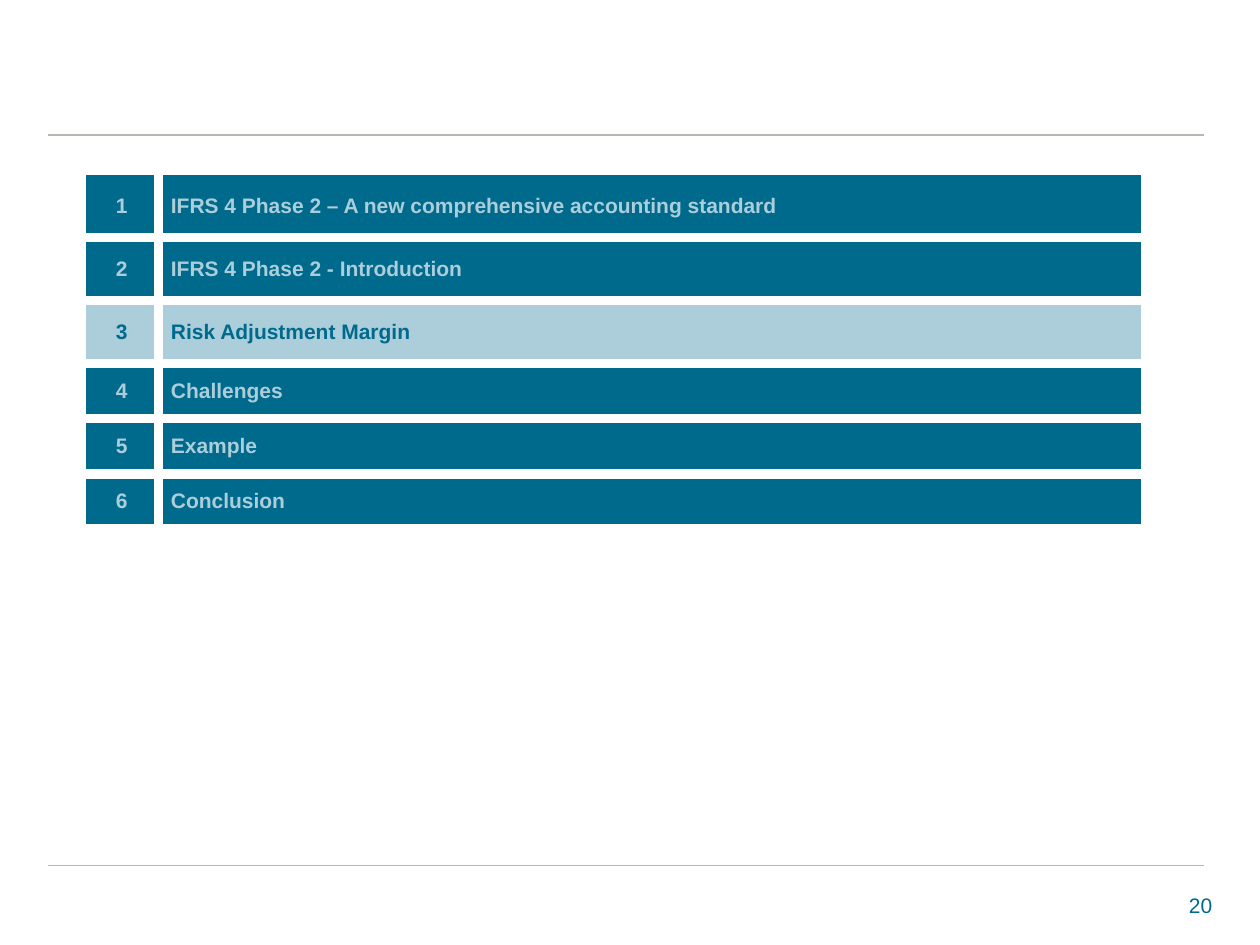
from lxml.etree import SubElement
from pptx import Presentation
from pptx.dml.color import RGBColor
from pptx.enum.shapes import MSO_CONNECTOR
from pptx.enum.text import MSO_ANCHOR, PP_ALIGN
from pptx.oxml import parse_xml
from pptx.oxml.ns import nsdecls, qn
from pptx.util import Pt

COLOURS = {"teal": "006A8D", "pale": "ABCEDA", "rule": "B7B8B1", "white": "FFFFFF"}
AGENDA = [
    ("IFRS 4 Phase 2 – A new comprehensive accounting standard", 36.4),
    ("IFRS 4 Phase 2 - Introduction", 36),
    ("Risk Adjustment Margin", 36),
    ("Challenges", 31.5),
    ("Example", 31.5),
    ("Conclusion", 31.5),
]
CURRENT_TOPIC = 3
HANGING_TOPICS = 4
COLUMN_WIDTHS = (42, 562)


class SlideBuilder:
    """Draw styled elements on the current slide."""

    def __init__(self, slide):
        self.slide = slide
        self.font_format = {"name": "Arial", "size": Pt(12)}

    def colour(self, name):
        return RGBColor.from_string(COLOURS[name])

    def add_text(self, paragraph, text, colour, bold, alignment):
        run = paragraph.add_run()
        run.text = text
        paragraph.alignment = alignment
        for name, value in {**self.font_format, "bold": bold}.items():
            setattr(run.font, name, value)
        run.font.color.rgb = self.colour(colour)

    def rule(self, left, right, top):
        line = self.slide.shapes.add_connector(
            MSO_CONNECTOR.STRAIGHT, Pt(left), Pt(top), Pt(right), Pt(top))
        line.line.width = Pt(0.75)
        line.line.color.rgb = self.colour("rule")
        SubElement(line._element.spPr, qn("a:effectLst"))

    def page_number(self, text, left, top, width, height):
        box = self.slide.shapes.add_textbox(Pt(left), Pt(top), Pt(width), Pt(height))
        frame = box.text_frame
        for name, value in {"word_wrap": True, "margin_right": 0}.items():
            setattr(frame, name, value)
        self.add_text(frame.paragraphs[0], text, "teal", False, PP_ALIGN.RIGHT)

    def borders(self, cell, widths):
        properties = cell._tc.get_or_add_tcPr()
        for position, (side, width) in enumerate(widths.items()):
            properties.insert(position, parse_xml(
                f'<a:ln{side} {nsdecls("a")} w="{Pt(width)}"><a:solidFill>'
                f'<a:srgbClr val="{COLOURS["white"]}"/></a:solidFill></a:ln{side}>'))

    def cell(self, cell, text, fill, colour, alignment, hanging, widths):
        cell.vertical_anchor = MSO_ANCHOR.MIDDLE
        cell.fill.solid()
        cell.fill.fore_color.rgb = self.colour(fill)
        self.borders(cell, widths)
        paragraph = cell.text_frame.paragraphs[0]
        if hanging:
            properties = paragraph._p.get_or_add_pPr()
            properties.set("marL", str(Pt(27)))
            properties.set("indent", str(-Pt(27)))
        self.add_text(paragraph, text, colour, True, alignment)

    def agenda(self, topics, current, left, top):
        height = sum(row_height for _, row_height in topics)
        table = self.slide.shapes.add_table(
            len(topics), len(COLUMN_WIDTHS), Pt(left), Pt(top),
            Pt(sum(COLUMN_WIDTHS)), Pt(height)).table
        for name in ("first_row", "horz_banding"):
            setattr(table, name, False)
        for column, width in zip(table.columns, COLUMN_WIDTHS):
            column.width = Pt(width)
        for number, (topic, row_height) in enumerate(topics, 1):
            row = table.rows[number - 1]
            row.height = Pt(row_height)
            fill, colour = ("pale", "teal") if number == current else ("teal", "pale")
            top_width = 1 if number == 1 else 6
            self.cell(row.cells[0], str(number), fill, colour, PP_ALIGN.CENTER, True,
                      {"L": 1, "R": 6, "T": top_width, "B": 6})
            self.cell(row.cells[1], topic, fill, colour, PP_ALIGN.LEFT,
                      number <= HANGING_TOPICS,
                      {"L": 6, "R": 1, "T": top_width, "B": 6})


def main():
    presentation = Presentation()
    presentation.slide_width, presentation.slide_height = Pt(720), Pt(540)
    builder = SlideBuilder(presentation.slides.add_slide(presentation.slide_layouts[6]))
    for top in (77.2, 494.5):
        builder.rule(27.2, 688.3, top)
    builder.page_number("20", 535.7, 506.2, 157, 21.6)
    builder.agenda(AGENDA, CURRENT_TOPIC, 48.5, 99.4)
    presentation.save("out.pptx")


if __name__ == "__main__":
    main()
